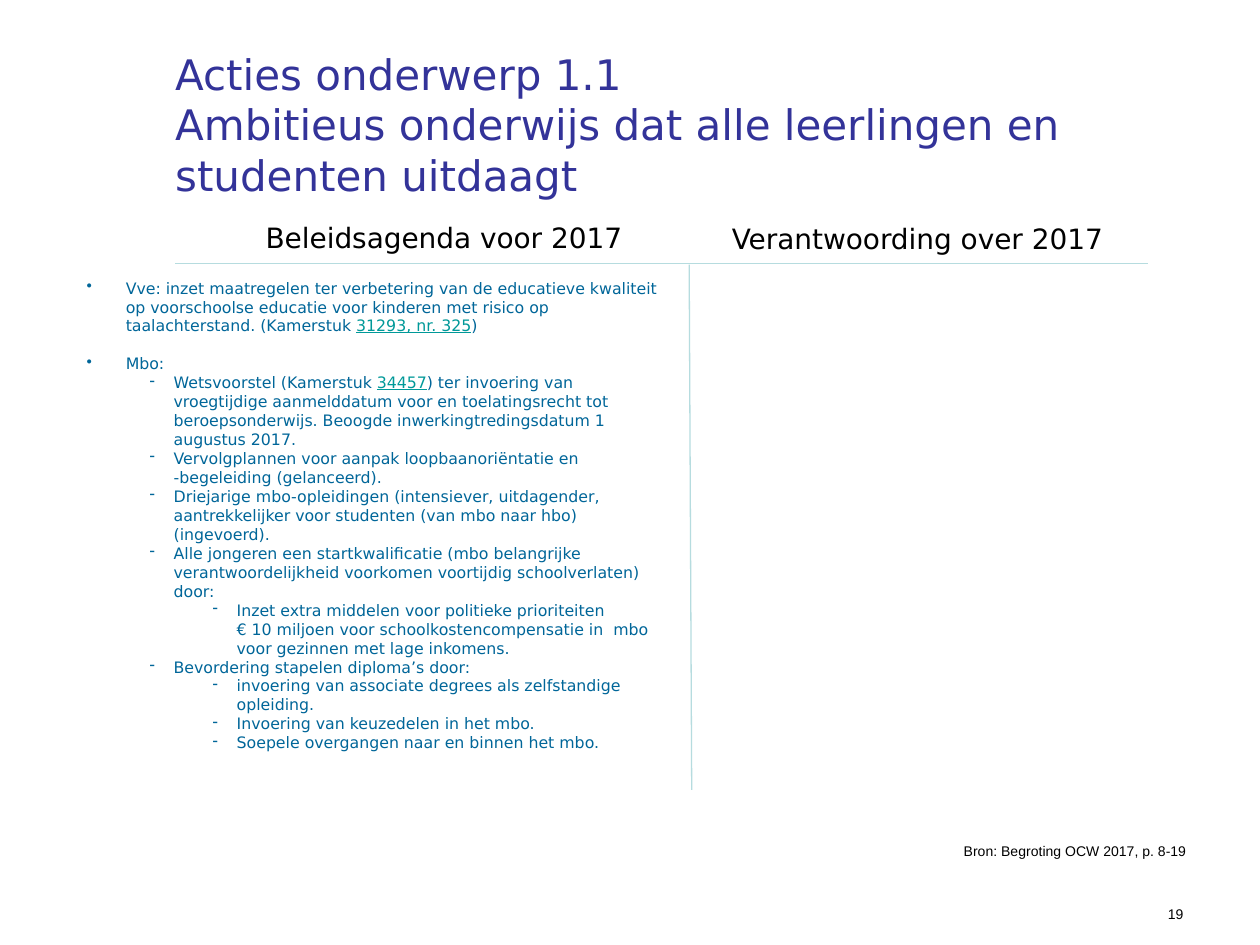
from dataclasses import dataclass

from lxml import etree
from pptx import Presentation
from pptx import util as u
from pptx.dml.color import RGBColor
from pptx.enum import shapes, text
from pptx.oxml.ns import qn

SANS, ARIAL = "DejaVu Sans", "Arial"
BLACK, INDIGO, BLUE, TEAL, RULE = "000000", "333399", "006699", "009999", "B6DCDF"

# Bullet per level: symbol, left margin and hanging indent in inches
BULLETS = [("•", 0.31, 0.31), ("-", 0.69, 0.19), ("-", 1.19, 0.19)]

# Actions: level and text; a part between bars is a document number
ACTIONS = [
    (0, "Vve: inzet maatregelen ter verbetering van de educatieve kwaliteit op "
        "voorschoolse educatie voor kinderen met risico op taalachterstand. "
        "(Kamerstuk |31293, nr. 325|)"),
    (0, "Mbo:"),
    (1, "Wetsvoorstel (Kamerstuk |34457|) ter invoering van vroegtijdige "
        "aanmelddatum voor en toelatingsrecht tot beroepsonderwijs. Beoogde "
        "inwerkingtredingsdatum 1 augustus 2017."),
    (1, "Vervolgplannen voor aanpak loopbaanoriëntatie en -begeleiding (gelanceerd)."),
    (1, "Driejarige mbo-opleidingen (intensiever, uitdagender, aantrekkelijker "
        "voor studenten (van mbo naar hbo) (ingevoerd)."),
    (1, "Alle jongeren een startkwalificatie (mbo belangrijke "
        "verantwoordelijkheid voorkomen voortijdig schoolverlaten) door:"),
    (2, "Inzet extra middelen voor politieke prioriteiten\n"
        "€ 10 miljoen voor schoolkostencompensatie in  mbo voor gezinnen met "
        "lage inkomens."),
    (1, "Bevordering stapelen diploma’s door:"),
    (2, "invoering van associate degrees als zelfstandige opleiding."),
    (2, "Invoering van keuzedelen in het mbo."),
    (2, "Soepele overgangen naar en binnen het mbo."),
]


def color(value):
    return RGBColor.from_string(value)


def write(para, words, size=9, font=SANS, ink=BLACK, underline=None):
    """Add formatted text to a paragraph; a newline becomes a line break."""
    for number, line in enumerate(words.split("\n")):
        if number:
            para.add_line_break()
        span = para.add_run()
        span.text = line
        span.font.size = u.Pt(size)
        span.font.name = font
        span.font.color.rgb = color(ink)
        span.font.underline = underline


@dataclass
class Builder:
    """Places elements on a grid of 100 columns by 75 rows."""
    deck: object
    page: object
    columns: int = 100
    rows: int = 75

    def place(self, column, row):
        return (round(self.deck.slide_width * column / self.columns),
                round(self.deck.slide_height * row / self.rows))

    def title(self, words, column, row, width, height):
        box = self.page.shapes.title
        box.left, box.top = self.place(column, row)
        box.width, box.height = self.place(width, height)
        frame = box.text_frame
        frame.auto_size = text.MSO_AUTO_SIZE.NONE
        frame.vertical_anchor = text.MSO_ANCHOR.MIDDLE
        para = frame.paragraphs[0]
        para.alignment = text.PP_ALIGN.LEFT
        write(para, words, size=24, ink=INDIGO)

    def box(self, column, row, width, height):
        box = self.page.shapes.add_textbox(*self.place(column, row),
                                           *self.place(width, height))
        box.text_frame.word_wrap = True
        return box.text_frame

    def label(self, words, column, row, width, height, **style):
        write(self.box(column, row, width, height).paragraphs[0], words, **style)

    def bullets(self, items, column, row, width, height):
        frame = self.box(column, row, width, height)
        for number, (level, words) in enumerate(items):
            para = frame.add_paragraph() if number else frame.paragraphs[0]
            para.level = level
            if number and level == 0:
                para.space_before = u.Pt(10.8)
            symbol, margin, hang = BULLETS[level]
            props = para._p.get_or_add_pPr()
            props.set("marL", str(u.Inches(margin)))
            props.set("indent", str(-u.Inches(hang)))
            etree.SubElement(props, qn("a:buChar")).set("char", symbol)
            for part, piece in enumerate(words.split("|")):
                cited = part % 2 == 1
                write(para, piece, ink=TEAL if cited else BLUE,
                      underline=cited or None)

    def line(self, start, end):
        line = self.page.shapes.add_connector(
            shapes.MSO_CONNECTOR.STRAIGHT, *self.place(*start), *self.place(*end))
        line.line.color.rgb = color(RULE)
        line.line.width = u.Pt(0.75)
        etree.SubElement(line._element.spPr, qn("a:effectLst"))


def main():
    deck = Presentation()
    deck.slide_width, deck.slide_height = u.Inches(10), u.Inches(7.5)
    slide = Builder(deck, deck.slides.add_slide(deck.slide_layouts[5]))

    # Title
    slide.title("Acties onderwerp 1.1\n"
                "Ambitieus onderwijs dat alle leerlingen en studenten uitdaagt",
                12.9, 3.6, 83.7, 12.5)

    # Dividers between the two columns and below their headings
    slide.line((54.7, 21), (54.9, 62.7))
    slide.line((13.9, 20.9), (91.1, 20.9))

    # Column headings
    slide.label("Beleidsagenda voor 2017", 20.1, 17, 32.3, 3.7, size=16)
    slide.label("Verantwoording over 2017", 57.1, 17.1, 32.3, 3.7, size=16)

    # Policy actions
    slide.bullets(ACTIONS, 5.9, 21.6, 48.3, 48)

    # Source and page number
    slide.label("Bron: Begroting OCW 2017, p. 8-19", 75.5, 66.4, 20.5, 2.4,
                size=8, font=ARIAL)
    slide.label("19", 91.7, 71.4, 3.9, 2.4, size=8, font=ARIAL)

    deck.save("out.pptx")


if __name__ == "__main__":
    main()
